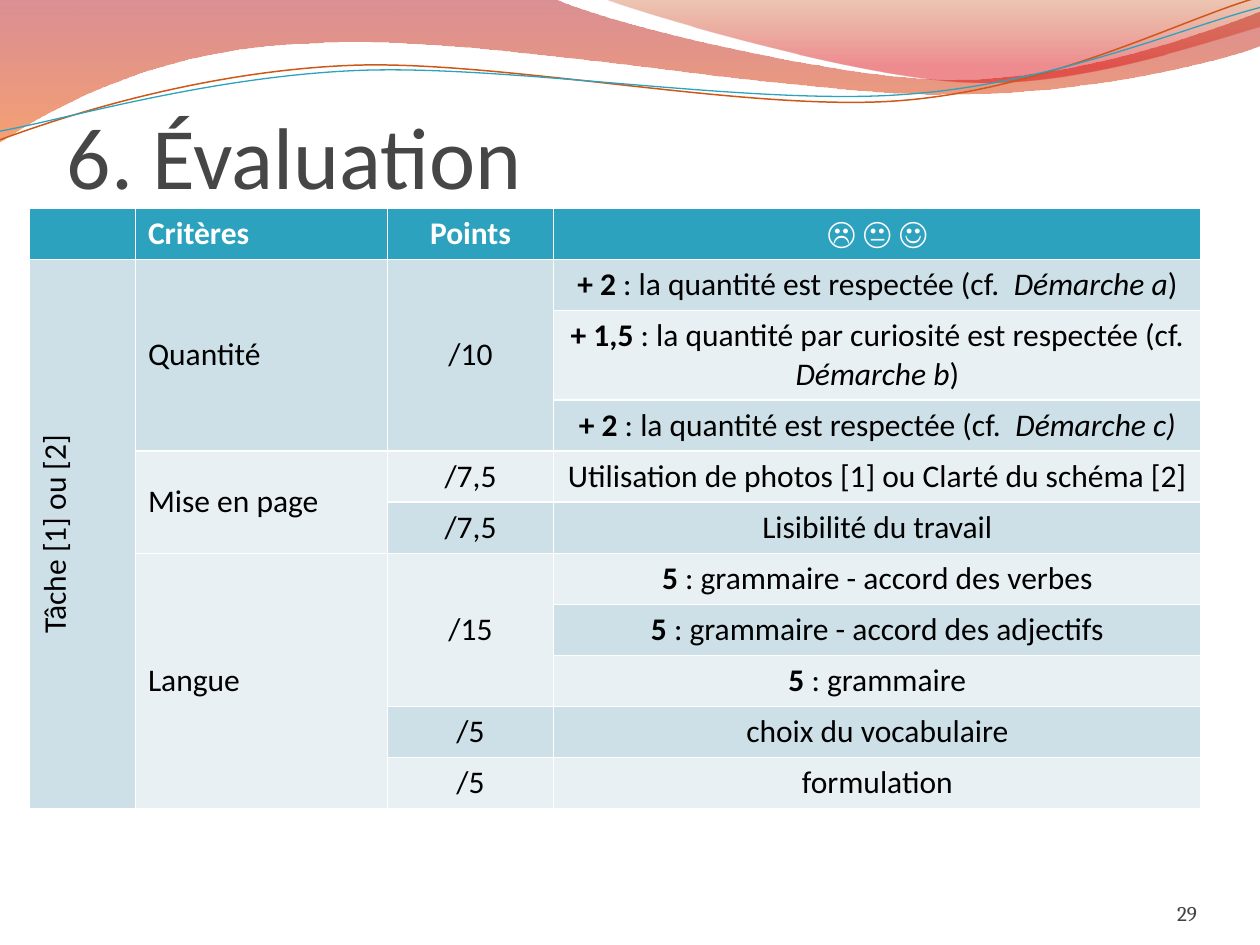
"""Build the evaluation grid slide with its wave header and save it to out.pptx."""
import math

from lxml import etree
from pptx import Presentation
from pptx import util as u
from pptx.dml.color import RGBColor
from pptx.enum import text
from pptx.oxml import ns

WHITE = RGBColor(0xFF, 0xFF, 0xFF)
BLACK = RGBColor(0x00, 0x00, 0x00)
TITLE_GREY = RGBColor(0x46, 0x46, 0x46)
NUMBER_GREY = RGBColor(0x43, 0x43, 0x43)
TEAL = RGBColor(0x2D, 0xA2, 0xBF)
BAND_DARK = RGBColor(0xCD, 0xE0, 0xE8)
BAND_LIGHT = RGBColor(0xE8, 0xF0, 0xF4)
CRIMSON = RGBColor(0xAF, 0x09, 0x11)
ORANGE = RGBColor(0xEE, 0x53, 0x00)
RUST = RGBColor(0xC2, 0x44, 0x00)
RED = RGBColor(0xDC, 0x00, 0x0B)
COPPER = RGBColor(0xCF, 0x58, 0x18)

LEFT, CENTER, RIGHT = text.PP_ALIGN.LEFT, text.PP_ALIGN.CENTER, text.PP_ALIGN.RIGHT
UNITS_PER_POINT = 100
LINE_TILT = -2.7

LEFT_WAVE = [
    (0, 0), (316.8, -0.7),
    (342.7, 12.2, 478.1, 45.4, 545.8, 45.4), (614.2, 45.4, 689.8, 18.7, 720, 6.5),
    (720.7, 25.9),
    (707.8, 31.7, 626.4, 54.7, 537.1, 54), (447.8, 54, 275, 20.2, 185, 24.5),
    (92.9, 25.9, 33.1, 59.8, -0.7, 81.4),
]
RIGHT_WAVE = [
    (344.9, -0.7),
    (366.5, 7.9, 491, 44.6, 553.7, 46.8), (616.3, 49.7, 691.9, 23, 720, 15.1),
    (720, 0),
]
COPPER_LINE = [
    (0, 79.9),
    (34.6, 67, 113.8, 41, 199.4, 37.4), (284.4, 33.8, 427, 64.1, 513.4, 57.6),
    (599.8, 51.1, 675.4, 10.8, 718.6, -1.4),
]
TEAL_LINE = [
    (0, 74.9),
    (33.8, 69.1, 118.1, 43.9, 203.8, 40.3), (290.2, 36.7, 429.8, 60.5, 516.2, 54),
    (601.9, 48.2, 677.5, 15.1, 720, 4.3),
]

COLUMN_WIDTHS = [60.5, 144, 95, 370]
ROW_COUNT, ROW_HEIGHT = 11, 29.2
HEADERS = ["", "Critères", "Points", "☹ 😐 ☺"]
TASK = "Tâche [1] ou [2]"
CRITERIA = [(1, 3, "Quantité"), (4, 2, "Mise en page"), (6, 5, "Langue")]
POINTS = [(1, 3, "/10"), (4, 1, "/7,5"), (5, 1, "/7,5"), (6, 3, "/15"), (9, 1, "/5"), (10, 1, "/5")]
DETAILS = [
    ("+ 2", " : la quantité est respectée (cf.  ", "Démarche a", ")"),
    ("+ 1,5", " : la quantité par curiosité est respectée (cf. ", "Démarche b", ")"),
    ("+ 2", " : la quantité est respectée (cf.  ", "Démarche c)"),
    ("", "Utilisation de photos [1] ou Clarté du schéma [2]"),
    ("", "Lisibilité du travail"),
    ("5", " : grammaire - accord des verbes"),
    ("5", " : grammaire - accord des adjectifs"),
    ("5", " : grammaire"),
    ("", "choix du vocabulaire"),
    ("", "formulation"),
]


def pairs(segment):
    """Split a flat segment into its points."""
    return list(zip(segment[::2], segment[1::2]))


def turned(segments, center, degrees):
    """Turn all points of the segments about a center."""
    cosine, sine = math.cos(math.radians(degrees)), math.sin(math.radians(degrees))
    result = []
    for segment in segments:
        offsets = [(x - center[0], y - center[1]) for x, y in pairs(segment)]
        points = [(center[0] + x * cosine - y * sine, center[1] + x * sine + y * cosine) for x, y in offsets]
        result.append(tuple(value for point in points for value in point))
    return result


class SlideBuilder:
    """Hold the style and the current slide, and add each kind of element."""

    font_name = "Calibri"
    body_size = 18

    def __init__(self, slide):
        """Keep the slide to draw on."""
        self.slide = slide

    def style(self, paragraph, size, color, alignment=LEFT, name=font_name, bold=False):
        """Format a whole paragraph."""
        paragraph.alignment = alignment
        font = paragraph.font
        font.name, font.size, font.bold = name, u.Pt(size), bold
        font.color.rgb = color

    def frame(self, shape, words, margin_top, **style):
        """Fill a bottom-anchored text frame with one paragraph."""
        frame = shape.text_frame
        frame.text = words
        frame.word_wrap = True
        frame.auto_size = text.MSO_AUTO_SIZE.NONE
        frame.vertical_anchor = text.MSO_ANCHOR.BOTTOM
        frame.margin_left = frame.margin_right = frame.margin_bottom = 0
        frame.margin_top = u.Pt(margin_top)
        self.style(frame.paragraphs[0], **style)

    def title(self, words, left, top, width, height):
        """Place the title placeholder."""
        shape = self.slide.shapes.title
        shape.left, shape.top, shape.width, shape.height = map(u.Pt, (left, top, width, height))
        self.frame(shape, words, 3.6, size=50, color=TITLE_GREY)

    def page_number(self, words, left, top, width, height):
        """Add the page number."""
        shape = self.slide.shapes.add_textbox(*map(u.Pt, (left, top, width, height)))
        self.frame(shape, words, 0, size=12, color=NUMBER_GREY, alignment=RIGHT, name="Cambria")

    def outline(self, segments, close):
        """Add a freeform of straight and cubic segments without shadow."""
        scaled = [[(round(x * UNITS_PER_POINT), round(y * UNITS_PER_POINT)) for x, y in pairs(segment)]
                  for segment in segments]
        ends = [points[-1] for points in scaled]
        builder = self.slide.shapes.build_freeform(*ends[0], scale=u.Pt(1) / UNITS_PER_POINT)
        builder.add_line_segments(ends[1:], close=close)
        shape = builder.convert_to_shape()
        shape.shadow.inherit = False
        left, top = (min(values) for values in zip(*ends))
        for line, points in zip(list(shape._element.iter(ns.qn("a:lnTo"))), scaled[1:]):
            if len(points) == 3:
                curve = etree.Element(ns.qn("a:cubicBezTo"))
                for x, y in points:
                    etree.SubElement(curve, ns.qn("a:pt"), x=str(x - left), y=str(y - top))
                line.getparent().replace(line, curve)
        return shape

    def wave(self, segments, stops):
        """Add a wave filled top to bottom with a translucent gradient."""
        shape = self.outline(segments, True)
        shape.fill.gradient()
        shape.fill.gradient_angle = 270
        for stop, (position, color, _) in zip(shape.fill.gradient_stops, stops):
            stop.position, stop.color.rgb = position, color
        for element, (_, _, opacity) in zip(shape._element.spPr.iter(ns.qn("a:srgbClr")), stops):
            etree.SubElement(element, ns.qn("a:alpha"), val=str(opacity * 1000))
        shape.line.fill.background()

    def wave_line(self, segments, center, color, width):
        """Add a thin open curve, tilted about its center."""
        shape = self.outline(turned(segments, center, -LINE_TILT), False)
        shape.rotation = LINE_TILT
        shape.fill.background()
        shape.line.color.rgb = color
        shape.line.width = u.Pt(width)

    def table(self, left, top):
        """Add an empty table with banded fills."""
        size = (left, top, sum(COLUMN_WIDTHS), ROW_COUNT * ROW_HEIGHT)
        table = self.slide.shapes.add_table(ROW_COUNT, len(COLUMN_WIDTHS), *map(u.Pt, size)).table
        for column, width in zip(table.columns, COLUMN_WIDTHS):
            column.width = u.Pt(width)
        for index, row in enumerate(table.rows):
            row.height = u.Pt(ROW_HEIGHT)
            for cell in row.cells:
                cell.fill.solid()
                cell.fill.fore_color.rgb = TEAL if index == 0 else BAND_DARK if index % 2 else BAND_LIGHT
        return table

    def cell(self, table, row, column, parts, span=1, alignment=CENTER, header=False):
        """Write a cell whose parts are bold, plain, italic and plain in turn."""
        cell = table.cell(row, column)
        if span > 1:
            cell.merge(table.cell(row + span - 1, column))
            cell.vertical_anchor = text.MSO_ANCHOR.MIDDLE
        paragraph = cell.text_frame.paragraphs[0]
        self.style(paragraph, self.body_size, WHITE if header else BLACK, alignment, bold=header)
        for index, part in enumerate(parts):
            if part:
                run = paragraph.add_run()
                run.text = part
                run.font.bold = header or index == 0
                run.font.italic = index == 2
        return cell


def main():
    """Build and save the slide."""
    presentation = Presentation()
    presentation.slide_width, presentation.slide_height = u.Pt(720), u.Pt(540)
    builder = SlideBuilder(presentation.slides.add_slide(presentation.slide_layouts[5]))
    builder.wave(LEFT_WAVE, [(0, CRIMSON, 45), (1, ORANGE, 55)])
    builder.wave(RIGHT_WAVE, [(0, RUST, 30), (0.8, RED, 45)])
    builder.wave_line(COPPER_LINE, (359.3, 41.4), COPPER, 0.85)
    builder.wave_line(TEAL_LINE, (359.6, 42.5), TEAL, 0.75)
    builder.title("6. Évaluation", 38.2, 28.1, 648, 90)
    table = builder.table(16.9, 119)
    for column, words in enumerate(HEADERS):
        builder.cell(table, 0, column, ("", words), alignment=LEFT if column < 2 else CENTER, header=True)
    task = builder.cell(table, 1, 0, ("", TASK), span=ROW_COUNT - 1)
    task._tc.get_or_add_tcPr().set("vert", "vert270")
    for row, span, words in CRITERIA:
        builder.cell(table, row, 1, ("", words), span, LEFT)
    for row, span, words in POINTS:
        builder.cell(table, row, 2, ("", words), span)
    for row, parts in enumerate(DETAILS, 1):
        builder.cell(table, row, 3, parts)
    builder.page_number("29", 624.2, 500.4, 59.8, 28.8)
    presentation.save("out.pptx")


if __name__ == "__main__":
    main()
